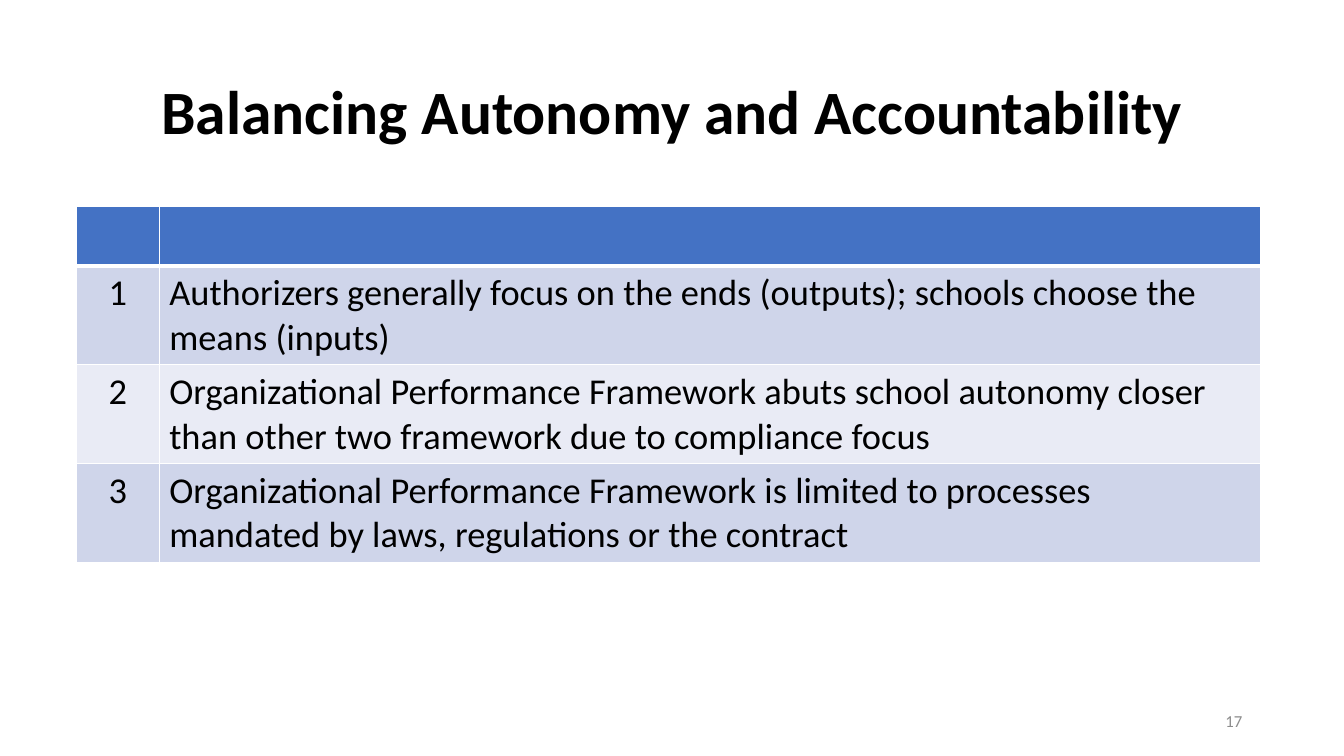
from lxml import etree
from pptx import Presentation
from pptx.dml.color import RGBColor
from pptx.enum.text import MSO_ANCHOR, PP_ALIGN
from pptx.oxml.ns import qn
from pptx.util import Inches, Pt

LEFT, CENTER, RIGHT = PP_ALIGN.LEFT, PP_ALIGN.CENTER, PP_ALIGN.RIGHT
MIDDLE = MSO_ANCHOR.MIDDLE
FONT = "Calibri"
BLACK, WHITE, GRAY = "000000", "FFFFFF", "8C8C8C"
HEADER, BANDS = "4472C4", ("CFD5EA", "E9EBF5")
COL_WIDTHS = (0.82, 10.92)
HEADER_HEIGHT, ROW_HEIGHT = 0.59, 0.98
POINTS = (
    "Authorizers generally focus on the ends (outputs); schools choose the means (inputs)",
    "Organizational Performance Framework abuts school autonomy closer than other two "
    "framework due to compliance focus",
    "Organizational Performance Framework is limited to processes mandated by laws, "
    "regulations or the contract",
)


def rgb(color):
    return RGBColor.from_string(color)


def write(tf, text, size, color=BLACK, align=LEFT, bold=False, spacing=1.0):
    p = tf.paragraphs[0]
    p.alignment = align
    p.line_spacing = spacing
    r = p.add_run()
    r.text = text
    for name, value in {"name": FONT, "size": Pt(size), "bold": bold}.items():
        setattr(r.font, name, value)
    r.font.color.rgb = rgb(color)


def add_text(s, box, text, size, **style):
    tf = s.shapes.add_textbox(*map(Inches, box)).text_frame
    tf.word_wrap = True
    tf.vertical_anchor = MIDDLE
    write(tf, text, size, **style)


def format_cell(cell, fill, top=1, bottom=1):
    """Give the cell white borders, with widths in points, and then its fill."""
    tc_pr = cell._tc.get_or_add_tcPr()
    for side, width in {"L": 1, "R": 1, "T": top, "B": bottom}.items():
        ln = etree.SubElement(tc_pr, qn(f"a:ln{side}"), w=str(Pt(width)))
        solid = etree.SubElement(ln, qn("a:solidFill"))
        etree.SubElement(solid, qn("a:srgbClr"), val=WHITE)
    cell.fill.solid()
    cell.fill.fore_color.rgb = rgb(fill)


def add_points_table(s, left, top, points):
    heights = [HEADER_HEIGHT] + [ROW_HEIGHT] * len(points)
    size = sum(COL_WIDTHS), sum(heights)
    table = s.shapes.add_table(len(heights), len(COL_WIDTHS),
                               *map(Inches, (left, top, *size))).table
    for col, width in zip(table.columns, COL_WIDTHS):
        col.width = Inches(width)
    for row, height in zip(table.rows, heights):
        row.height = Inches(height)
    for cell in table.rows[0].cells:
        format_cell(cell, HEADER, bottom=3)
    for i, point in enumerate(points, 1):
        number, body = table.rows[i].cells
        for cell in (number, body):
            format_cell(cell, BANDS[(i - 1) % 2], top=3 if i == 1 else 1)
        write(number.text_frame, str(i), 26, align=CENTER)
        write(body.text_frame, point, 26)


def main():
    prs = Presentation()
    prs.slide_width, prs.slide_height = Inches(13.33), Inches(7.5)
    s = prs.slides.add_slide(prs.slide_layouts[6])
    add_text(s, (0.92, 0.41, 11.5, 1.45), "Balancing Autonomy and Accountability", 44,
             align=CENTER, bold=True, spacing=0.9)
    add_points_table(s, 0.76, 2.05, POINTS)
    add_text(s, (9.42, 6.95, 3, 0.4), "17", 12, color=GRAY, align=RIGHT)
    prs.save("out.pptx")


if __name__ == "__main__":
    main()
